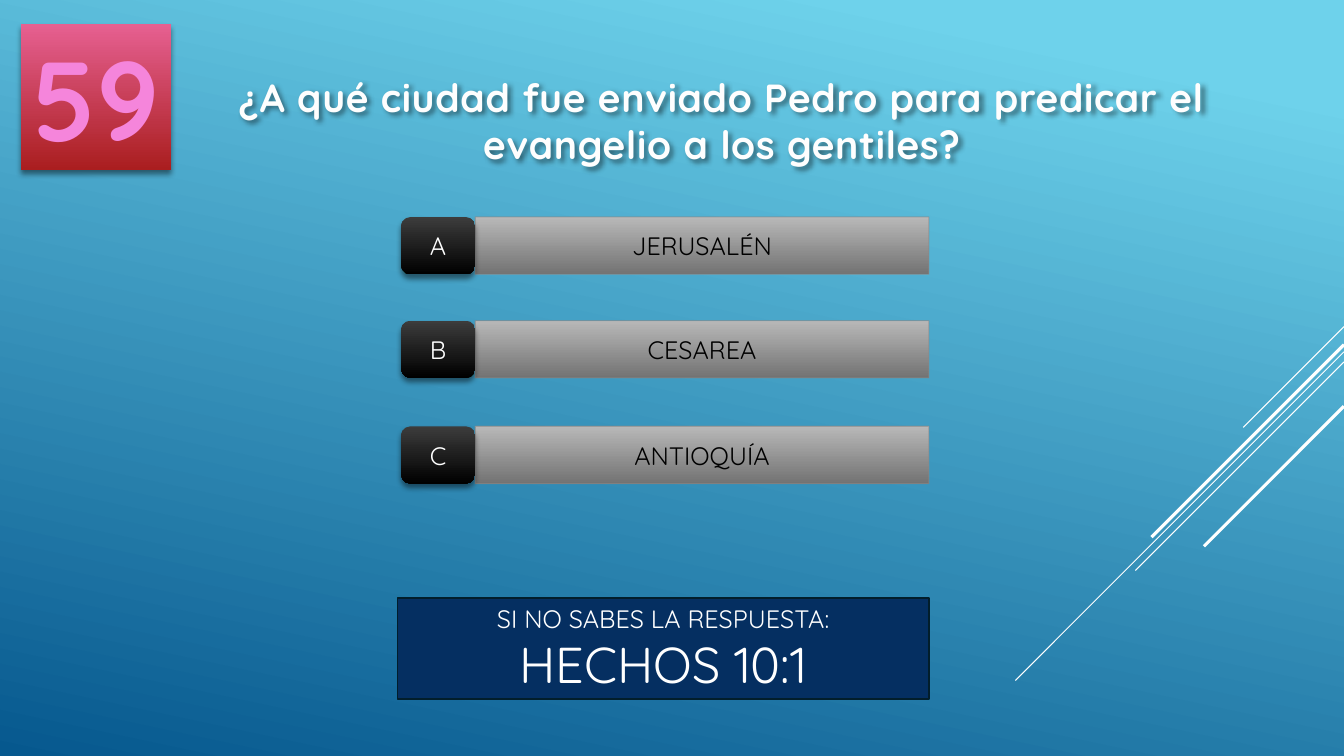
import pptx
import pptx.dml.color
import pptx.enum.shapes
import pptx.enum.text
import pptx.oxml
import pptx.oxml.ns
import pptx.util

Pt = pptx.util.Pt
Shapes = pptx.enum.shapes.MSO_SHAPE
Anchor = pptx.enum.text.MSO_ANCHOR

FONT = "Quicksand"
NUMBER = "59"
QUESTION = "¿A qué ciudad fue enviado Pedro para predicar el evangelio a los gentiles?"
ANSWERS = [("A", "JERUSALÉN", 155), ("B", "CESAREA", 229), ("C", "ANTIOQUÍA", 304.5)]
HINT = [("SI NO SABES LA RESPUESTA:", 18), ("HECHOS 10:1", 36)]
# Diagonals falling from the right edge: start height, horizontal reach, weight
DIAGONALS = [(233.3, 72, 0.75), (251.3, 234.7, 0.75), (258.5, 149, 0.75),
             (246.2, 137.5, 2.25), (290.2, 100, 2.25)]

PAGE_WIDTH, PAGE_HEIGHT = 960, 540
LETTER_LEFT, LETTER_WIDTH = 286.5, 53
BAR_LEFT, BAR_WIDTH, ROW_HEIGHT = 339.5, 324, 41


def color(value):
    return pptx.dml.color.RGBColor.from_string(value)


def set_gradient(fill, first, last, angle=90, start=0):
    """Fill with two colours; the angle runs clockwise, start is a fraction."""
    fill.gradient()
    fill.gradient_angle = 360 - angle
    for stop, value, position in zip(fill.gradient_stops, (first, last), (start, 1)):
        stop.color.rgb = color(value)
        stop.position = position


def set_effects(shape, blur=0, distance=0, angle=90, opacity=0):
    """Replace the theme effects by one shadow, or by none at zero opacity."""
    properties = shape._element.spPr
    for old in properties.findall(pptx.oxml.ns.qn("a:effectLst")):
        properties.remove(old)
    shadow = ""
    if opacity:
        shadow = (f'<a:outerShdw blurRad="{Pt(blur)}" dist="{Pt(distance)}" '
                  f'dir="{angle * 60000}" rotWithShape="0"><a:srgbClr val="000000">'
                  f'<a:alpha val="{opacity * 1000}"/></a:srgbClr></a:outerShdw>')
    properties.append(pptx.oxml.parse_xml(
        f'<a:effectLst {pptx.oxml.ns.nsdecls("a")}>{shadow}</a:effectLst>'))


def set_line(line, value=None, weight=0.75, opacity=100):
    if value is None:
        line.fill.background()
        return
    line.color.rgb = color(value)
    line.width = Pt(weight)
    if opacity < 100:
        tone = line._ln.find(".//" + pptx.oxml.ns.qn("a:srgbClr"))
        tone.append(pptx.oxml.parse_xml(
            f'<a:alpha {pptx.oxml.ns.nsdecls("a")} val="{opacity * 1000}"/>'))


def write(frame, text, size=18, ink="FFFFFF", bold=False, anchor=Anchor.MIDDLE,
          spacing=0, new=False):
    """Put one centred paragraph in the frame; new adds it below the others."""
    frame.word_wrap = True
    frame.auto_size = pptx.enum.text.MSO_AUTO_SIZE.NONE
    frame.vertical_anchor = anchor
    para = frame.add_paragraph() if new else frame.paragraphs[0]
    para.alignment = pptx.enum.text.PP_ALIGN.CENTER
    para.line_spacing = 1.0
    span = para.add_run()
    span.text = text
    span.font.name = FONT
    span.font.size = Pt(size)
    span.font.bold = bold
    span.font.color.rgb = color(ink)
    if spacing:
        span.font._element.set("spc", str(int(spacing * 100)))


def place(shape, left, top, width, height):
    shape.left, shape.top = Pt(left), Pt(top)
    shape.width, shape.height = Pt(width), Pt(height)


def add_box(page, kind, left, top, width, height, gradient=None):
    box = page.shapes.add_shape(kind, Pt(left), Pt(top), Pt(width), Pt(height))
    box.shadow.inherit = False
    if gradient:
        set_gradient(box.fill, *gradient)
    set_line(box.line)
    return box


def add_diagonal(page, top, reach, weight):
    line = page.shapes.add_connector(
        pptx.enum.shapes.MSO_CONNECTOR.STRAIGHT,
        Pt(PAGE_WIDTH), Pt(top), Pt(PAGE_WIDTH - reach), Pt(top + reach))
    set_line(line.line, "FFFFFF", weight)
    set_effects(line)


def add_answer(page, letter, answer, top):
    bar = add_box(page, Shapes.RECTANGLE, BAR_LEFT, top, BAR_WIDTH, ROW_HEIGHT,
                  ("B8B8B8", "737373"))
    set_line(bar.line, "898989", opacity=60)
    write(bar.text_frame, answer, ink="000000")
    key = add_box(page, Shapes.ROUNDED_RECTANGLE, LETTER_LEFT, top, LETTER_WIDTH,
                  ROW_HEIGHT, ("3C3C3C", "000000"))
    set_effects(key, blur=4, distance=3, opacity=46)
    write(key.text_frame, letter)


def main():
    deck = pptx.Presentation()
    deck.slide_width, deck.slide_height = Pt(PAGE_WIDTH), Pt(PAGE_HEIGHT)
    page = deck.slides.add_slide(deck.slide_layouts.get_by_name("Title Only"))
    set_gradient(page.background.fill, "6ED2EB", "06588E", angle=102, start=0.1)

    for diagonal in DIAGONALS:
        add_diagonal(page, *diagonal)

    title = page.shapes.title
    place(title, 131, 49, 769.5, 75)
    write(title.text_frame, QUESTION, size=28, ink="FEFEFE", bold=True,
          anchor=Anchor.TOP, spacing=0.5)
    set_effects(title, blur=3, distance=2, angle=45, opacity=45)

    for answer in ANSWERS:
        add_answer(page, *answer)

    hint = add_box(page, Shapes.RECTANGLE, 284, 427, 379.5, 72.5)
    hint.fill.solid()
    hint.fill.fore_color.rgb = color("052F61")
    set_line(hint.line, "021E2B", 1.25)
    for index, (text, size) in enumerate(HINT):
        write(hint.text_frame, text, size=size, new=index > 0)

    badge = add_box(page, Shapes.RECTANGLE, 15, 17.3, 107.3, 104.2, ("E66091", "AA1E1F"))
    set_effects(badge, blur=4, distance=3, opacity=46)
    write(badge.text_frame, NUMBER, size=80, ink="F585DB", bold=True, anchor=Anchor.TOP)

    deck.save("out.pptx")


if __name__ == "__main__":
    main()
